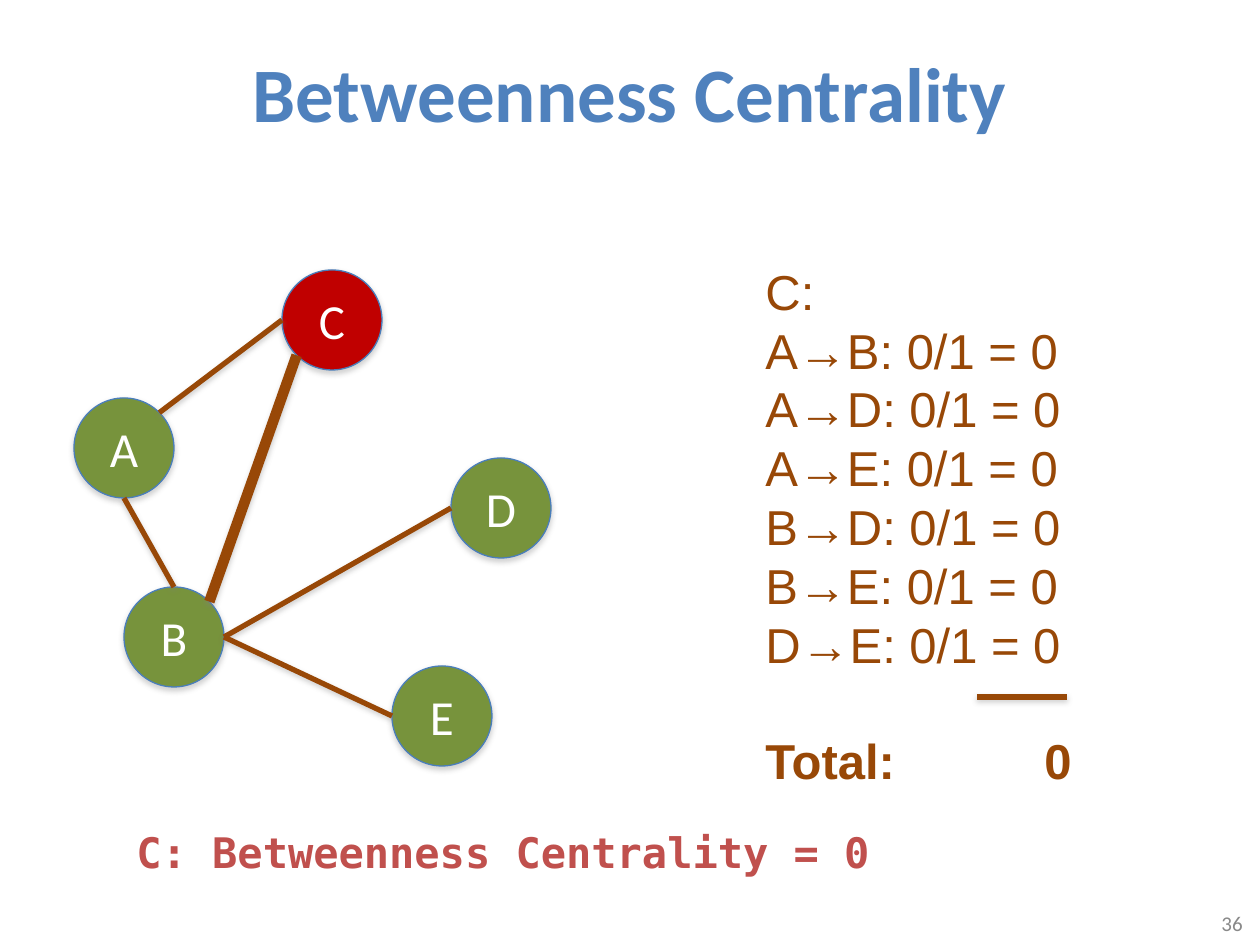
from math import cos, radians, sin

from lxml.etree import SubElement
from pptx import Presentation
from pptx.dml.color import RGBColor
from pptx.enum.shapes import MSO_CONNECTOR, MSO_SHAPE
from pptx.enum.text import MSO_ANCHOR, PP_ALIGN
from pptx.oxml.ns import qn
from pptx.util import Pt

PX = 914400 / 126
SIZE = 100
GREEN, RED, BROWN = "77933C", "C00000", "984807"

NODES = {  # left, top, fill
    "A": (74, 398, GREEN),
    "B": (124, 587, GREEN),
    "D": (451, 458, GREEN),
    "E": (392, 666, GREEN),
    "C": (282, 270, RED),
}
EAST, SOUTH, SOUTHWEST, WEST, NORTH, NORTHEAST = 0, 90, 135, 180, 270, 315
EDGES = [  # node, side, node, side, width in points
    ("A", SOUTH, "B", NORTH, 3),
    ("A", NORTHEAST, "C", WEST, 3),
    ("B", NORTHEAST, "C", SOUTHWEST, 6),
    ("B", EAST, "D", WEST, 3),
    ("B", EAST, "E", WEST, 3),
]
PATHS = ["A→B", "A→D", "A→E", "B→D", "B→E", "D→E"]
SUMS = ["C:"] + [f"{pair}: 0/1 = 0" for pair in PATHS]


def emu(px):
    return round(px * PX)


def color(code):
    return RGBColor.from_string(code)


def shade(shape, dist, alpha):
    """Give the shape a soft grey shadow straight below it."""
    shape_props = shape._element.spPr
    for old in shape_props.findall(qn("a:effectLst")):
        shape_props.remove(old)
    effects = SubElement(shape_props, qn("a:effectLst"))
    shadow = SubElement(effects, qn("a:outerShdw"), blurRad="40000",
                        dist=str(dist), dir="5400000", rotWithShape="0")
    tone = SubElement(shadow, qn("a:srgbClr"), val="808080")
    SubElement(tone, qn("a:alpha"), val=str(alpha * 1000))


def write(frame, lines, size, tint, font="Calibri", bold=False,
          align=PP_ALIGN.LEFT, anchor=MSO_ANCHOR.TOP):
    frame.word_wrap = True
    frame.vertical_anchor = anchor
    for i, line in enumerate(lines):
        para = frame.add_paragraph() if i else frame.paragraphs[0]
        para.alignment = align
        run = para.add_run()
        run.text = line
        run.font.size = Pt(size)
        run.font.name = font
        run.font.bold = bold
        run.font.color.rgb = color(tint)


def add_text(slide, box, lines, **style):
    frame = slide.shapes.add_textbox(*map(emu, box)).text_frame
    write(frame, lines, **style)
    return frame


def add_node(slide, name):
    left, top, fill = NODES[name]
    node = slide.shapes.add_shape(MSO_SHAPE.OVAL, *map(emu, (left, top, SIZE, SIZE)))
    node.fill.solid()
    node.fill.fore_color.rgb = color(fill)
    node.line.color.rgb = color("4A7EBB")
    node.line.width = Pt(0.75)
    shade(node, 23000, 35)
    frame = node.text_frame
    frame.margin_left = frame.margin_right = 0
    frame.margin_top = frame.margin_bottom = 0
    write(frame, [name], size=28, tint="FFFFFF",
          align=PP_ALIGN.CENTER, anchor=MSO_ANCHOR.MIDDLE)


def add_line(slide, start, end, width):
    line = slide.shapes.add_connector(MSO_CONNECTOR.STRAIGHT, *map(emu, start + end))
    line.line.color.rgb = color(BROWN)
    line.line.width = Pt(width)
    shade(line, 20000, 38)


def rim(name, angle):
    """Point on a node's edge, the angle running clockwise from east."""
    left, top, _ = NODES[name]
    half, turn = SIZE / 2, radians(angle)
    return left + half + half * cos(turn), top + half + half * sin(turn)


def add_total(frame):
    """Set the total below the rule, its value on a tab stop."""
    last = frame.paragraphs[-1]
    last.runs[0].font.bold = True
    tabs = SubElement(last._p.get_or_add_pPr(), qn("a:tabLst"))
    SubElement(tabs, qn("a:tab"), pos=str(emu(279)), algn="l")
    last.space_before = Pt(33)


def main():
    deck = Presentation()
    deck.slide_width, deck.slide_height = emu(1260), emu(945)
    slide = deck.slides.add_slide(deck.slide_layouts[6])

    add_text(slide, (63, 38, 1134, 107), ["Betweenness Centrality"], size=44,
             tint="4F81BD", bold=True, align=PP_ALIGN.CENTER, anchor=MSO_ANCHOR.MIDDLE)
    add_text(slide, (961, 898, 294, 50), ["36"], size=12, tint="898989",
             align=PP_ALIGN.RIGHT, anchor=MSO_ANCHOR.MIDDLE)

    for name in NODES:
        add_node(slide, name)
    for first, side, second, other, width in EDGES:
        add_line(slide, rim(first, side), rim(second, other), width)

    sums = add_text(slide, (753, 255, 335, 547), SUMS + ["Total:\t0"],
                    size=28, tint=BROWN, font="Arial")
    add_total(sums)
    add_line(slide, (977, 697), (1067, 697), 3)
    add_text(slide, (124, 820, 1022, 63), ["C: Betweenness Centrality = 0"],
             size=24, tint="C0504D", font="DejaVu Sans Mono", bold=True)

    deck.save("out.pptx")


if __name__ == "__main__":
    main()
